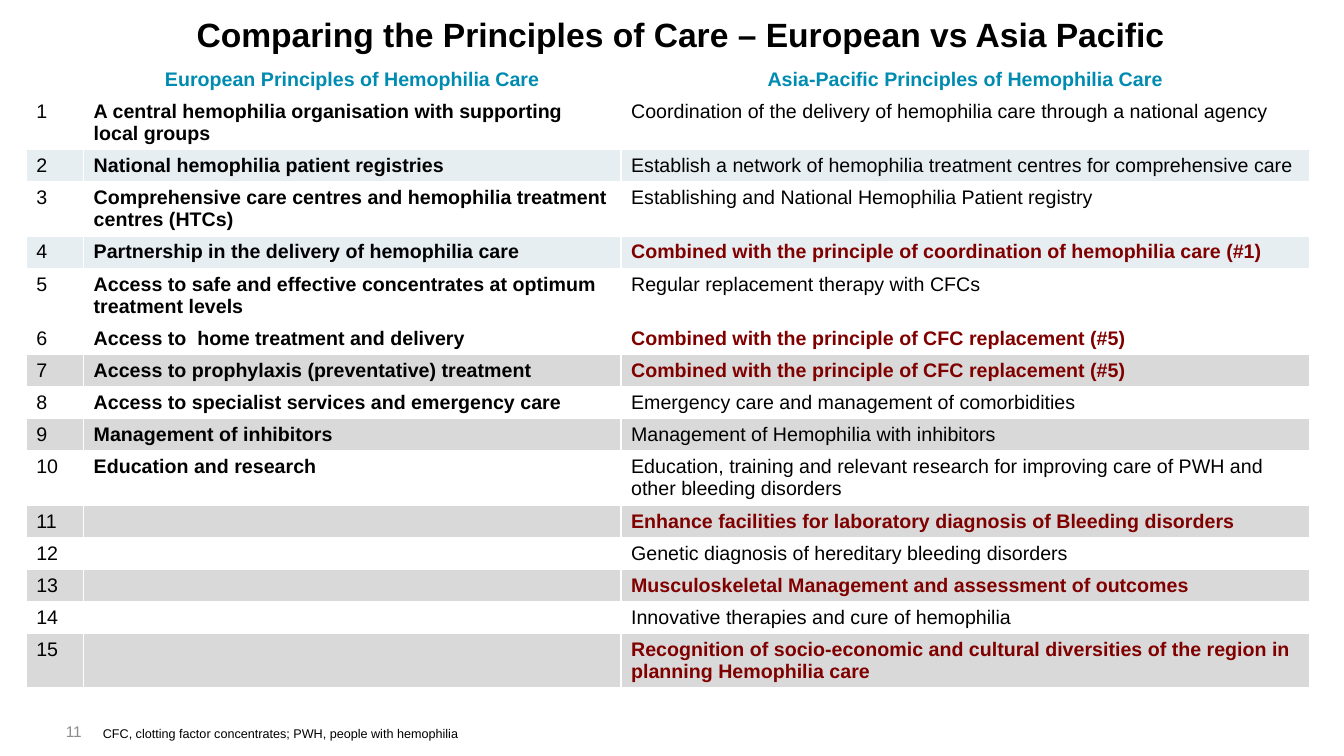
from dataclasses import dataclass

from lxml import etree
from pptx import Presentation
from pptx.dml.color import RGBColor
from pptx.enum import text
from pptx.oxml import ns
from pptx.util import Inches, Pt


@dataclass(frozen=True)
class Theme:
    font: str = "Arial"
    ink: str = "000000"
    heading: str = "008BB0"
    accent: str = "800000"
    muted: str = "8C8C8C"
    white: str = "FFFFFF"
    pale: str = "E7EEF2"
    grey: str = "D9D9D9"
    title_size: float = 24
    table_size: float = 14
    number_size: float = 11
    note_size: float = 9


HEADINGS = ("", "European Principles of Hemophilia Care",
            "Asia-Pacific Principles of Hemophilia Care")

# European principle, Asia-Pacific principle, Asia-Pacific text is highlighted
PRINCIPLES = [
    ("A central hemophilia organisation with supporting local groups",
     "Coordination of the delivery of hemophilia care through a national agency", False),
    ("National hemophilia patient registries",
     "Establish a network of hemophilia treatment centres for comprehensive care", False),
    ("Comprehensive care centres and hemophilia treatment centres (HTCs)",
     "Establishing and National Hemophilia Patient registry", False),
    ("Partnership in the delivery of hemophilia care",
     "Combined with the principle of coordination of hemophilia care (#1)", True),
    ("Access to safe and effective concentrates at optimum treatment levels",
     "Regular replacement therapy with CFCs", False),
    ("Access to  home treatment and delivery",
     "Combined with the principle of CFC replacement (#5)", True),
    ("Access to prophylaxis (preventative) treatment",
     "Combined with the principle of CFC replacement (#5)", True),
    ("Access to specialist services and emergency care",
     "Emergency care and management of comorbidities", False),
    ("Management of inhibitors", "Management of Hemophilia with inhibitors", False),
    ("Education and research",
     "Education, training and relevant research for improving care of PWH and "
     "other bleeding disorders", False),
    ("", "Enhance facilities for laboratory diagnosis of Bleeding disorders", True),
    ("", "Genetic diagnosis of hereditary bleeding disorders", False),
    ("", "Musculoskeletal Management and assessment of outcomes", True),
    ("", "Innovative therapies and cure of hemophilia", False),
    ("", "Recognition of socio-economic and cultural diversities of the region in "
     "planning Hemophilia care", True),
]
TWO_LINE_ROWS = {1, 3, 5, 10, 15}
COLUMN_WIDTHS = (0.57, 5.33, 6.83)


class SlideBuilder:
    def __init__(self, page, theme):
        self.page = page
        self.theme = theme

    def set_text(self, paragraph, words, size, color, bold=False,
                 align=text.PP_ALIGN.LEFT):
        paragraph.alignment = align
        if words:
            paragraph.text = words
        else:
            end = etree.SubElement(paragraph._p, ns.qn("a:endParaRPr"))
            end.set("sz", str(int(size * 100)))
        font = paragraph.font
        font.name, font.size, font.bold = self.theme.font, Pt(size), bold
        font.color.rgb = RGBColor.from_string(color)

    def place(self, box, left, top, width, height, anchor, bottom):
        """Position a box, set its frame and return its first paragraph."""
        box.left, box.top = Inches(left), Inches(top)
        box.width, box.height = Inches(width), Inches(height)
        frame = box.text_frame
        frame.word_wrap = True
        frame.auto_size = text.MSO_AUTO_SIZE.NONE
        frame.vertical_anchor = anchor
        frame.margin_left = frame.margin_right = Inches(0.1)
        frame.margin_top, frame.margin_bottom = Inches(0.05), Inches(bottom)
        return frame.paragraphs[0]

    def title(self, words):
        line = self.place(self.page.shapes.title, 0.65, 0.09, 12.2, 0.5,
                          text.MSO_ANCHOR.MIDDLE, 0.05)
        self.set_text(line, words, self.theme.title_size, self.theme.ink, True,
                      text.PP_ALIGN.CENTER)

    def footnote(self, words):
        line = self.place(self.page.placeholders[1], 0.92, 6.95, 10.85, 0.4,
                          text.MSO_ANCHOR.BOTTOM, 0)
        line.line_spacing = 0.9
        line.space_before = Pt(0)
        properties = line._p.get_or_add_pPr()
        properties.set("marL", "0")
        properties.set("indent", "0")
        etree.SubElement(properties, ns.qn("a:buNone"))
        self.set_text(line, words, self.theme.note_size, self.theme.ink)

    def page_number(self, words):
        box = self.page.shapes.add_textbox(0, 0, 0, 0)
        line = self.place(box, 0.26, 6.95, 0.65, 0.4, text.MSO_ANCHOR.BOTTOM, 0)
        self.set_text(line, words, self.theme.number_size, self.theme.muted,
                      align=text.PP_ALIGN.RIGHT)

    def border(self, cell, bottom_width):
        """Draw white rules round a cell, with its own width below."""
        properties = cell._tc.get_or_add_tcPr()
        for side, width in (("L", 1), ("R", 1), ("T", 1), ("B", bottom_width)):
            rule = etree.SubElement(properties, ns.qn(f"a:ln{side}"), w=str(int(Pt(width))))
            fill = etree.SubElement(rule, ns.qn("a:solidFill"))
            etree.SubElement(fill, ns.qn("a:srgbClr"), val=self.theme.white)

    def row_fill(self, number):
        if number in (2, 4):
            return self.theme.pale
        return self.theme.grey if number >= 7 and number % 2 else self.theme.white

    def comparison_table(self):
        theme = self.theme
        heights = [0.53 if row in TWO_LINE_ROWS else 0.31
                   for row in range(len(PRINCIPLES) + 1)]
        table = self.page.shapes.add_table(
            len(heights), len(COLUMN_WIDTHS), Inches(0.26), Inches(0.63),
            Inches(sum(COLUMN_WIDTHS)), Inches(sum(heights))).table
        table.horz_banding = False
        for column, width in zip(table.columns, COLUMN_WIDTHS):
            column.width = Inches(width)
        for row, height in zip(table.rows, heights):
            row.height = Inches(height)

        for column, words in enumerate(HEADINGS):
            cell = table.cell(0, column)
            self.border(cell, 3)
            cell.fill.background()
            self.set_text(cell.text_frame.paragraphs[0], words, theme.table_size,
                          theme.heading, True, text.PP_ALIGN.CENTER)

        for number, (european, asian, highlighted) in enumerate(PRINCIPLES, 1):
            asian_color = theme.accent if highlighted else theme.ink
            entries = ((str(number), theme.ink, False), (european, theme.ink, True),
                       (asian, asian_color, highlighted))
            for column, (words, color, bold) in enumerate(entries):
                cell = table.cell(number, column)
                self.border(cell, 1)
                cell.fill.solid()
                cell.fill.fore_color.rgb = RGBColor.from_string(self.row_fill(number))
                self.set_text(cell.text_frame.paragraphs[0], words, theme.table_size,
                              color, bold)


def main():
    deck = Presentation()
    deck.slide_width, deck.slide_height = Inches(13.33), Inches(7.5)
    page = deck.slides.add_slide(deck.slide_layouts[1])
    builder = SlideBuilder(page, Theme())
    builder.title("Comparing the Principles of Care – European vs Asia Pacific")
    builder.footnote("CFC, clotting factor concentrates; PWH, people with hemophilia")
    builder.page_number("11")
    builder.comparison_table()
    deck.save("out.pptx")


if __name__ == "__main__":
    main()
